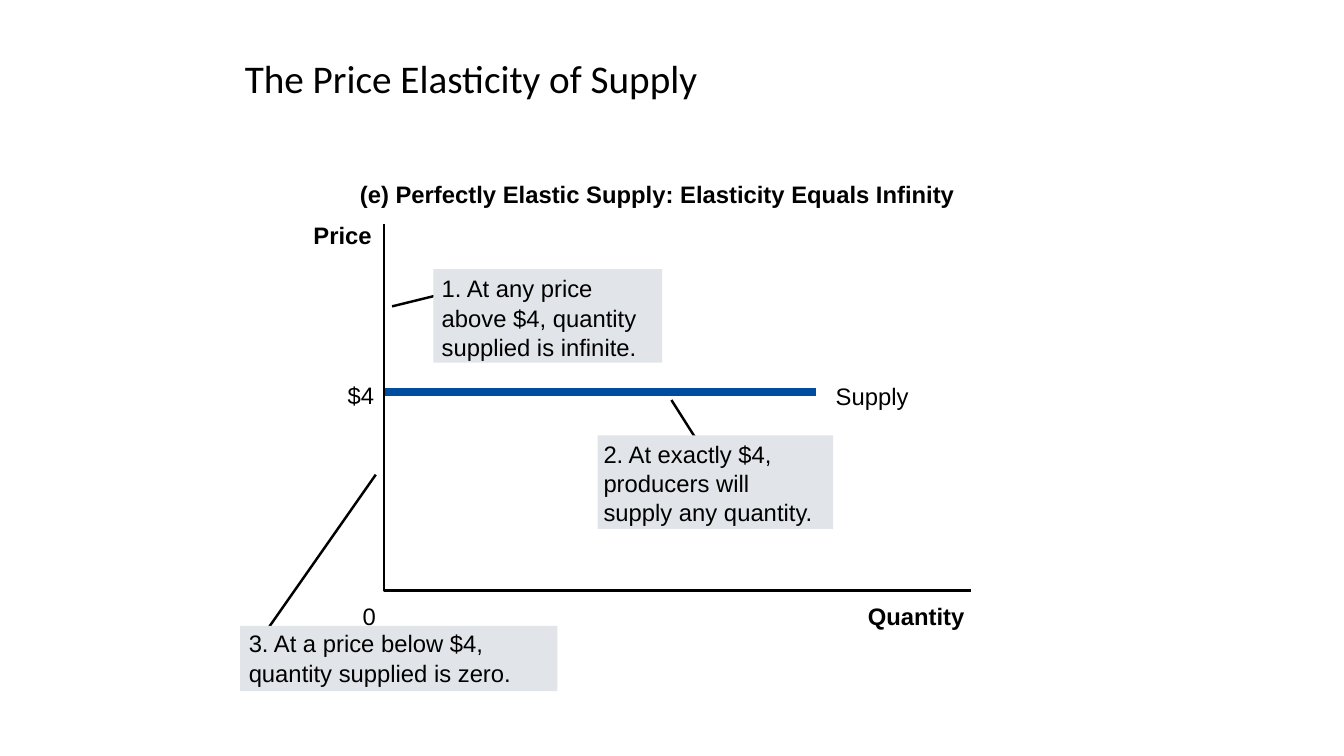
"""Build a slide showing a perfectly elastic supply curve."""
from typing import NamedTuple

from lxml import etree
from pptx import Presentation
from pptx.dml.color import RGBColor
from pptx.enum.shapes import MSO_CONNECTOR, MSO_SHAPE
from pptx.enum.text import MSO_ANCHOR, MSO_AUTO_SIZE
from pptx.oxml.ns import qn
from pptx.slide import Slide
from pptx.util import Cm, Pt

STRAIGHT = MSO_CONNECTOR.STRAIGHT
RECTANGLE = MSO_SHAPE.RECTANGLE
MIDDLE = MSO_ANCHOR.MIDDLE
FIT_SHAPE = MSO_AUTO_SIZE.SHAPE_TO_FIT_TEXT

BLACK = RGBColor(0x00, 0x00, 0x00)
SUPPLY_BLUE = RGBColor(0x00, 0x4C, 0x9F)
CALLOUT_GREY = RGBColor(0xE1, 0xE5, 0xE9)

LINE_HEIGHT = 0.74
THIN = 1.75
THICK = 5.13


class Label(NamedTuple):
    text: str
    left: float
    top: float
    width: float
    bold: bool = False


class Segment(NamedTuple):
    x1: float
    y1: float
    x2: float
    y2: float


class Box(NamedTuple):
    left: float
    top: float
    width: float
    height: float


class Callout(NamedTuple):
    pointer: Segment
    box: Box
    text_left: float
    text_top: float
    lines: tuple[tuple[str, float], ...]


TITLE_BOX = Box(5.92, 1.17, 22.45, 1.78)
AXES = ((9.68, 5.64), (9.68, 14.88), (24.46, 14.88))
SUPPLY_CURVE = Segment(20.57, 9.88, 9.7, 9.88)

LABELS = (
    Label("(e) Perfectly Elastic Supply: Elasticity Equals Infinity", 9.07, 4.52, 15.14, True),
    Label("Quantity", 21.87, 15.16, 2.46, True),
    Label("0", 9.14, 15.16, 0.33),
    Label("Price", 7.9, 5.56, 1.5, True),
    Label("$4", 8.76, 9.6, 0.69),
    Label("Supply", 21.06, 9.63, 1.85),
)

CALLOUTS = (
    Callout(
        Segment(6.71, 15.9, 9.47, 11.96), Box(6.05, 15.77, 8, 1.65), 6.27, 15.85,
        (("3. At a price below $4,", 5.97), ("quantity supplied is zero.", 6.68)),
    ),
    Callout(
        Segment(16.92, 10.08, 17.63, 11.2), Box(15.06, 10.97, 5.94, 2.36), 15.21, 11.07,
        (("2. At exactly $4,", 4.29), ("producers will", 3.71), ("supply any quantity.", 5.33)),
    ),
    Callout(
        Segment(9.88, 7.72, 11.02, 7.44), Box(10.92, 6.78, 5.77, 2.36), 11.13, 6.91,
        (("1. At any price", 3.86), ("above $4, quantity", 4.98), ("supplied is infinite.", 4.95)),
    ),
)


def add_title(slide: Slide, text: str) -> None:
    """Add the slide heading."""
    frame = slide.shapes.add_textbox(*map(Cm, TITLE_BOX)).text_frame
    frame.word_wrap = True
    frame.vertical_anchor = MIDDLE
    paragraph = frame.paragraphs[0]
    paragraph.line_spacing = 0.8
    run = paragraph.add_run()
    run.text = text
    run.font.name = "Calibri"
    run.font.size = Pt(28)
    run.font.color.rgb = BLACK


def add_label(slide: Slide, label: Label) -> None:
    """Add one line of text without margins."""
    shape = slide.shapes.add_textbox(
        Cm(label.left), Cm(label.top), Cm(label.width), Cm(LINE_HEIGHT)
    )
    frame = shape.text_frame
    frame.margin_left = frame.margin_right = frame.margin_top = frame.margin_bottom = 0
    frame.word_wrap = False
    frame.auto_size = FIT_SHAPE
    run = frame.paragraphs[0].add_run()
    run.text = label.text
    run.font.name = "Arial"
    run.font.size = Pt(17)
    run.font.bold = label.bold
    run.font.color.rgb = BLACK


def add_segment(slide: Slide, segment: Segment, color: RGBColor, width: float) -> None:
    """Add a straight line without shadow."""
    connector = slide.shapes.add_connector(STRAIGHT, *map(Cm, segment))
    connector.line.color.rgb = color
    connector.line.width = Pt(width)
    etree.SubElement(connector._element.spPr, qn("a:effectLst"))


def add_axes(slide: Slide) -> None:
    """Add the price and quantity axes as one open outline."""
    origin, *others = [(Cm(x), Cm(y)) for x, y in AXES]
    builder = slide.shapes.build_freeform(*origin)
    builder.add_line_segments(others, close=False)
    axes = builder.convert_to_shape()
    axes.shadow.inherit = False
    axes.fill.background()
    axes.line.color.rgb = BLACK
    axes.line.width = Pt(THIN)


def add_callout(slide: Slide, callout: Callout) -> None:
    """Add a pointer, its grey box and the lines of text in it."""
    add_segment(slide, callout.pointer, BLACK, THIN)
    box = slide.shapes.add_shape(RECTANGLE, *map(Cm, callout.box))
    box.shadow.inherit = False
    box.fill.solid()
    box.fill.fore_color.rgb = CALLOUT_GREY
    box.line.fill.background()
    for row, (text, width) in enumerate(callout.lines):
        top = callout.text_top + row * LINE_HEIGHT
        add_label(slide, Label(text, callout.text_left, top, width))


def main() -> None:
    """Create and save the presentation."""
    presentation = Presentation()
    presentation.slide_width = Cm(33.87)
    presentation.slide_height = Cm(19.05)
    slide = presentation.slides.add_slide(presentation.slide_layouts[6])
    add_title(slide, "The Price Elasticity of Supply")
    add_axes(slide)
    for label in LABELS:
        add_label(slide, label)
    add_segment(slide, SUPPLY_CURVE, SUPPLY_BLUE, THICK)
    for callout in CALLOUTS:
        add_callout(slide, callout)
    presentation.save("out.pptx")


if __name__ == "__main__":
    main()
